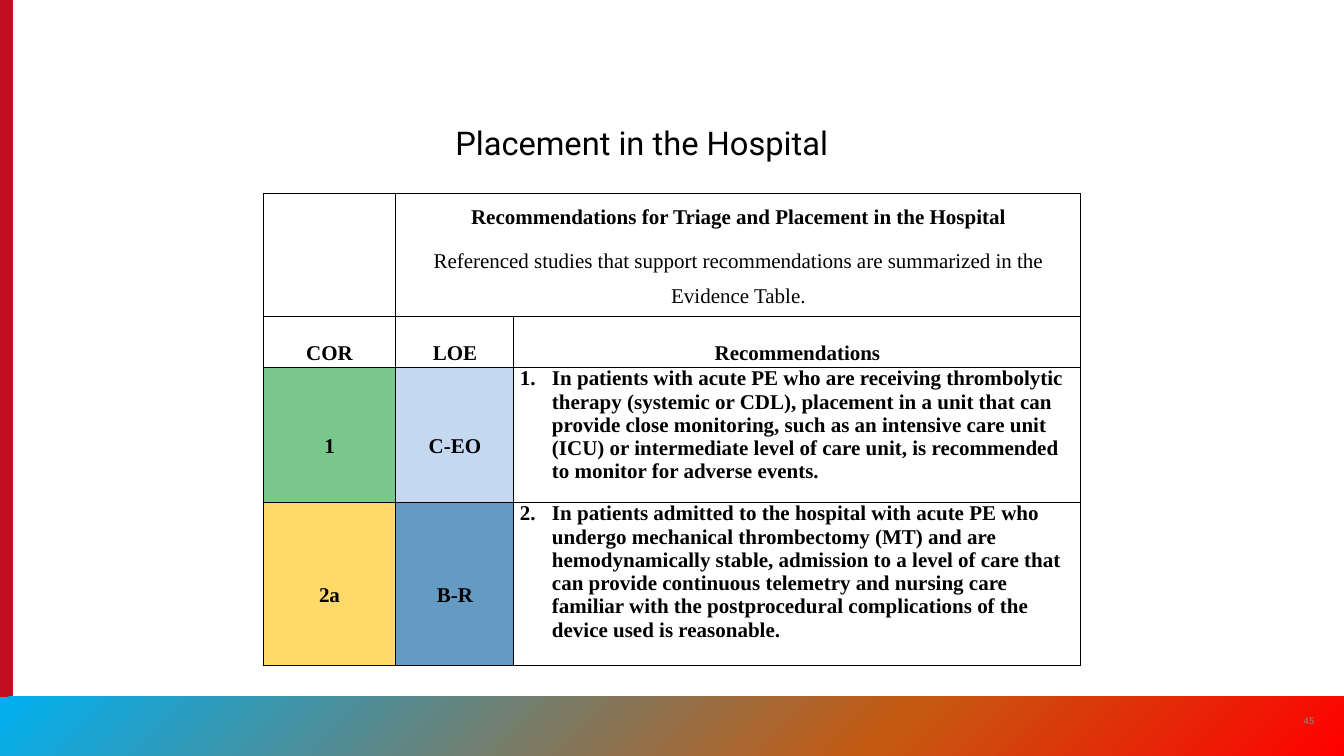
from copy import deepcopy

from pptx import Presentation
from pptx.dml.color import RGBColor
from pptx.enum.shapes import MSO_SHAPE
from pptx.enum.text import MSO_ANCHOR, MSO_AUTO_SIZE, PP_ALIGN
from pptx.oxml.ns import qn
from pptx.oxml.xmlchemy import OxmlElement
from pptx.util import Emu, Pt

RECTANGLE = MSO_SHAPE.RECTANGLE
LEFT, CENTER = PP_ALIGN.LEFT, PP_ALIGN.CENTER
TOP, MIDDLE = MSO_ANCHOR.TOP, MSO_ANCHOR.MIDDLE
GROW = MSO_AUTO_SIZE.SHAPE_TO_FIT_TEXT

PIXELS_PER_INCH = 84
SANS, SERIF = "Roboto", "Times New Roman"
COLORS = {
    "text": "000000",
    "number": "8A8B8A",
    "side": "C10E21",
    "cor_1": "79C78D",
    "cor_2a": "FFDA68",
    "loe_ceo": "C4D9F0",
    "loe_br": "659BC2",
}
FOOTER_STOPS = [(0, "00B0F0"), (0.66, "C55A11"), (1, "FF0000")]
COLUMNS = [133, 118, 567]
ROWS = [101, 36, 135, 163]
HEADINGS = ["COR", "LOE", "Recommendations"]
RECOMMENDATIONS = [
    ("1", "cor_1", "C-EO", "loe_ceo",
     "In patients with acute PE who are receiving thrombolytic therapy (systemic or CDL), "
     "placement in a unit that can provide close monitoring, such as an intensive care unit "
     "(ICU) or intermediate level of care unit, is recommended to monitor for adverse events."),
    ("2a", "cor_2a", "B-R", "loe_br",
     "In patients admitted to the hospital with acute PE who undergo mechanical thrombectomy "
     "(MT) and are hemodynamically stable, admission to a level of care that can provide "
     "continuous telemetry and nursing care familiar with the postprocedural complications "
     "of the device used is reasonable."),
]


def px(length):
    return Emu(round(length * 914400 / PIXELS_PER_INCH))


def rgb(name):
    return RGBColor.from_string(COLORS[name])


def add_span(para, text, size, font, color="text", bold=False):
    span = para.add_run()
    span.text = text
    span.font.size = Pt(size)
    span.font.name = font
    span.font.bold = bold
    span.font.color.rgb = rgb(color)


def add_bar(page, left, top, width, height):
    bar = page.shapes.add_shape(RECTANGLE, px(left), px(top), px(width), px(height))
    bar.shadow.inherit = False
    bar.line.fill.background()
    return bar


def fill_gradient(shape, stops):
    shape.fill.gradient()
    shape.fill.gradient_angle = 315
    stop_list = shape.fill.gradient_stops
    elements = shape._element.spPr.find(qn("a:gradFill")).find(qn("a:gsLst"))
    for _ in range(len(stops) - len(stop_list)):
        elements.append(deepcopy(elements[0]))
    for stop, (position, color) in zip(shape.fill.gradient_stops, stops):
        stop.position = position
        stop.color.rgb = RGBColor.from_string(color)


def add_label(page, left, top, width, height, text, size, color, align):
    box = page.shapes.add_textbox(px(left), px(top), px(width), px(height))
    box.text_frame.word_wrap = True
    para = box.text_frame.paragraphs[0]
    para.alignment = align
    add_span(para, text, size, SANS, color)
    return box


def add_borders(cell):
    properties = cell._tc.get_or_add_tcPr()
    for side in ("a:lnL", "a:lnR", "a:lnT", "a:lnB"):
        line = OxmlElement(side)
        line.set("w", str(Pt(1)))
        fill = OxmlElement("a:solidFill")
        color = OxmlElement("a:srgbClr")
        color.set("val", COLORS["text"])
        fill.append(color)
        line.append(fill)
        properties.append(line)


def number_paragraph(para, start):
    properties = para._p.get_or_add_pPr()
    properties.set("marL", str(px(32)))
    properties.set("indent", str(px(-32)))
    number = OxmlElement("a:buAutoNum")
    number.set("type", "arabicPeriod")
    number.set("startAt", str(start))
    properties.append(number)


def write_paragraph(para, text, spacing=None, align=CENTER, bold=True):
    para.alignment = align
    para.line_spacing = spacing
    para.space_after = Pt(8)
    add_span(para, text, 18, SERIF, bold=bold)


def write_centered(cell, text, color=None):
    cell.vertical_anchor = MIDDLE
    write_paragraph(cell.text_frame.paragraphs[0], text, 2.0)
    if color:
        cell.fill.solid()
        cell.fill.fore_color.rgb = rgb(color)


def add_grid(page, left, top):
    frame = page.shapes.add_table(len(ROWS), len(COLUMNS), px(left), px(top),
                                  px(sum(COLUMNS)), px(sum(ROWS)))
    table = frame.table
    table.first_row = False
    table.horz_banding = False
    for column, width in zip(table.columns, COLUMNS):
        column.width = px(width)
    for row, height in zip(table.rows, ROWS):
        row.height = px(height)
    for cell in table.iter_cells():
        cell.margin_left = cell.margin_right = px(6)
        cell.margin_top = cell.margin_bottom = 0
        cell.vertical_anchor = TOP
        add_borders(cell)
        cell.fill.background()
    return table


def add_recommendations(page):
    table = add_grid(page, 263, 194)
    header = table.cell(0, 1)
    header.merge(table.cell(0, 2))
    write_paragraph(header.text_frame.paragraphs[0],
                    "Recommendations for Triage and Placement in the Hospital", 1.5)
    write_paragraph(header.text_frame.add_paragraph(),
                    "Referenced studies that support recommendations are summarized "
                    "in the Evidence Table.", 1.5, bold=False)
    for column, heading in enumerate(HEADINGS):
        write_centered(table.cell(1, column), heading)
    for number, (cor, cor_color, loe, loe_color, advice) in enumerate(RECOMMENDATIONS, 1):
        row = number + 1
        write_centered(table.cell(row, 0), cor, cor_color)
        write_centered(table.cell(row, 1), loe, loe_color)
        para = table.cell(row, 2).text_frame.paragraphs[0]
        number_paragraph(para, number)
        write_paragraph(para, advice, align=LEFT)


def main():
    deck = Presentation()
    deck.slide_width, deck.slide_height = px(1344), px(756)
    page = deck.slides.add_slide(deck.slide_layouts[6])
    side = add_bar(page, 0, 0, 13, 756)
    side.fill.solid()
    side.fill.fore_color.rgb = rgb("side")
    footer = add_bar(page, 0, 697, 1344, 59)
    fill_gradient(footer, FOOTER_STOPS)
    number = add_label(page, 1289, 701, 40, 40, "45", 8, "number", CENTER)
    number.text_frame.vertical_anchor = MIDDLE
    title = add_label(page, 447, 119, 451, 48, "Placement in the Hospital", 28, "text", LEFT)
    title.text_frame.auto_size = GROW
    add_recommendations(page)
    deck.save("out.pptx")


if __name__ == "__main__":
    main()
